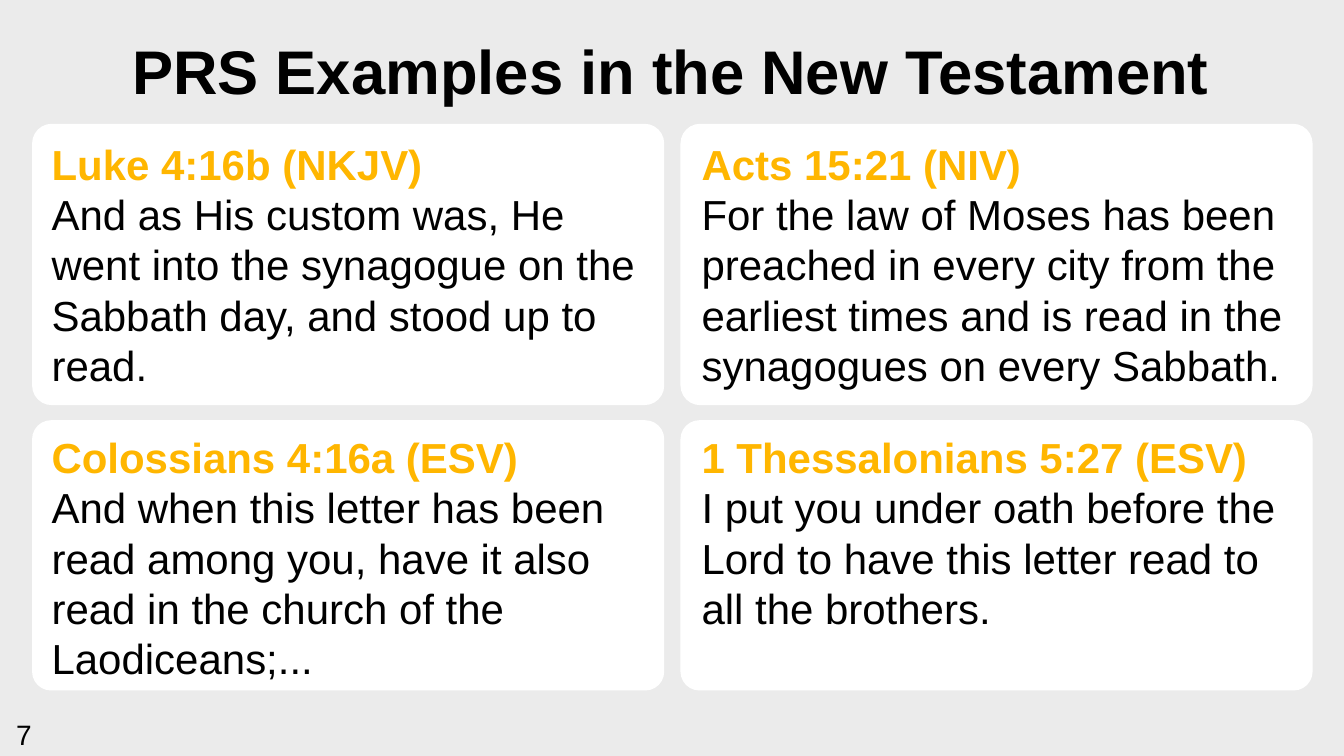
from pptx import Presentation
from pptx import util as u
from pptx.dml import color
from pptx.enum import shapes, text

HUES = {"page": "EBEBEB", "card": "FFFFFF", "ink": "000000", "gold": "FFB600"}


def hue(name):
    return color.RGBColor.from_string(HUES[name])


def fill_text(shape, lines, size, pitch, align=text.PP_ALIGN.LEFT):
    """Write (words, colour, bold) lines into a shape without margins."""
    frame = shape.text_frame
    frame.word_wrap = True
    frame.auto_size = text.MSO_AUTO_SIZE.NONE
    frame.vertical_anchor = text.MSO_ANCHOR.TOP
    frame.margin_left = frame.margin_right = 0
    frame.margin_top = frame.margin_bottom = 0
    for i, (words, tint, bold) in enumerate(lines):
        para = frame.add_paragraph() if i else frame.paragraphs[0]
        para.alignment = align
        para.line_spacing = u.Pt(pitch)
        para.space_before = para.space_after = u.Pt(0)
        run = para.add_run()
        run.text = words
        run.font.name = "Arial"
        run.font.size = u.Pt(size)
        run.font.bold = bold
        run.font.color.rgb = hue(tint)


deck = Presentation()
deck.slide_width, deck.slide_height = u.Cm(33.87), u.Cm(19.05)
slide = deck.slides.add_slide(deck.slide_layouts[5])
slide.background.fill.solid()
slide.background.fill.fore_color.rgb = hue("page")

title = slide.shapes.title
title.left, title.top = u.Cm(0.64), u.Cm(0.81)
title.width, title.height = u.Cm(32.56), u.Cm(1.88)
fill_text(title, [("PRS Examples in the New Testament", "ink", True)],
          44, 53, text.PP_ALIGN.CENTER)

# Columns: card left, text left. Rows: card top, card height, text top.
cols = [(0.81, 1.3), (17.15, 17.68)]
rows = [(3.12, 7.09, 3.48), (10.59, 6.81, 10.87)]

# Column, row, text width, text height, heading, words
verses = [
    (0, 0, 15.06, 6.4, "Luke 4:16b (NKJV)",
     "And as His custom was, He went into the synagogue on the "
     "Sabbath day, and stood up to read."),
    (1, 0, 15.39, 6.4, "Acts 15:21 (NIV)",
     "For the law of Moses has been preached in every city from the "
     "earliest times and is read in the synagogues on every Sabbath."),
    (0, 1, 14.71, 6.4, "Colossians 4:16a (ESV)",
     "And when this letter has been read among you, have it also "
     "read in the church of the Laodiceans;..."),
    (1, 1, 14.88, 5.13, "1 Thessalonians 5:27 (ESV)",
     "I put you under oath before the Lord to have this letter read to "
     "all the brothers."),
]

for col, row, wide, high, head, words in verses:
    left, inset = cols[col]
    top, tall, start = rows[row]
    card = slide.shapes.add_shape(
        shapes.MSO_SHAPE.ROUNDED_RECTANGLE,
        u.Cm(left), u.Cm(top), u.Cm(15.93), u.Cm(tall))
    card.adjustments[0] = 0.07
    card.shadow.inherit = False
    card.fill.solid()
    card.fill.fore_color.rgb = hue("card")
    card.line.fill.background()

    verse = slide.shapes.add_textbox(
        u.Cm(inset), u.Cm(start), u.Cm(wide), u.Cm(high))
    fill_text(verse, [(head, "gold", True), (words, "ink", False)], 30, 36)

number = slide.shapes.add_textbox(
    u.Cm(0.41), u.Cm(18.08), u.Cm(2.82), u.Cm(0.86))
fill_text(number, [("7", "ink", False)], 20, 24)

deck.save("out.pptx")
